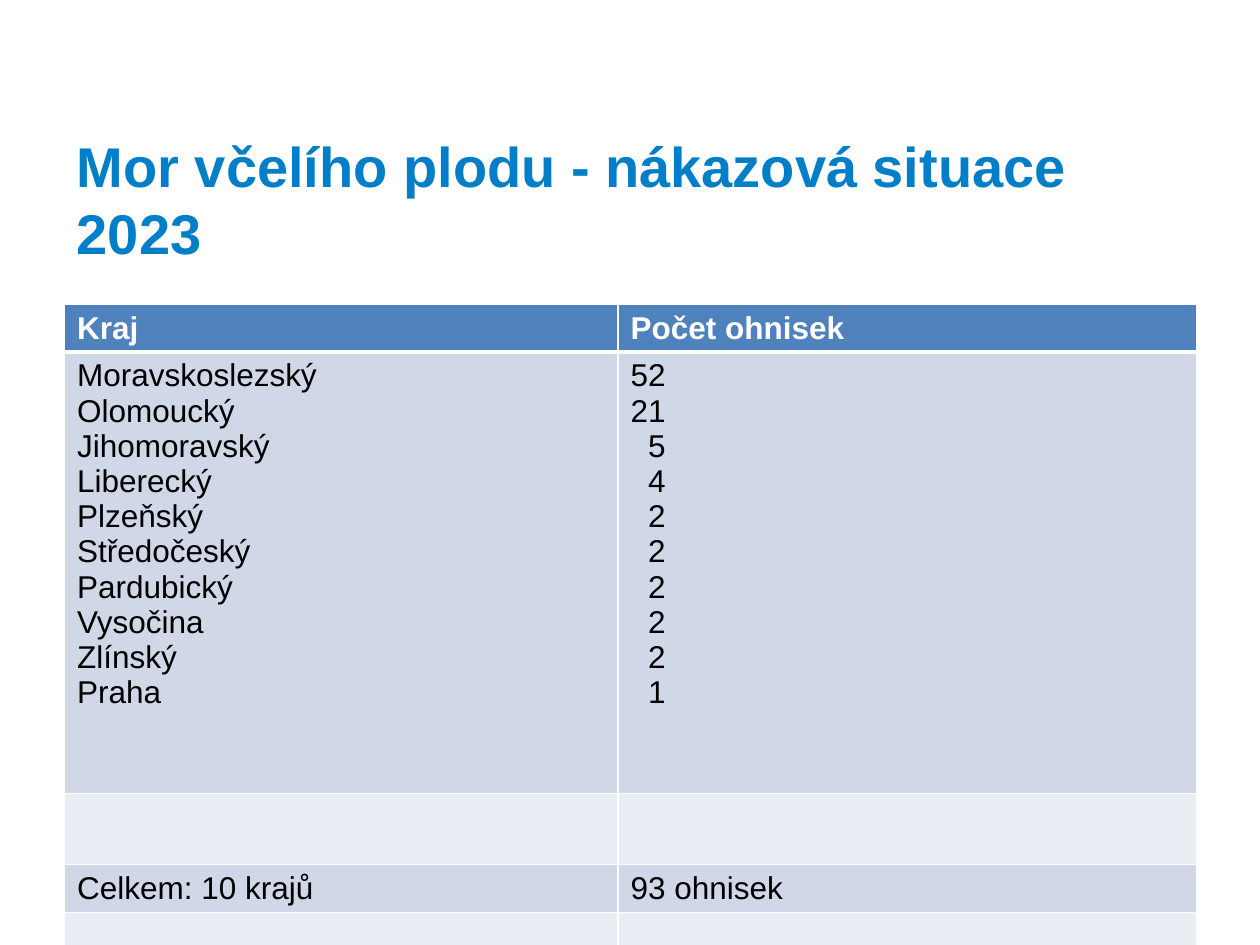
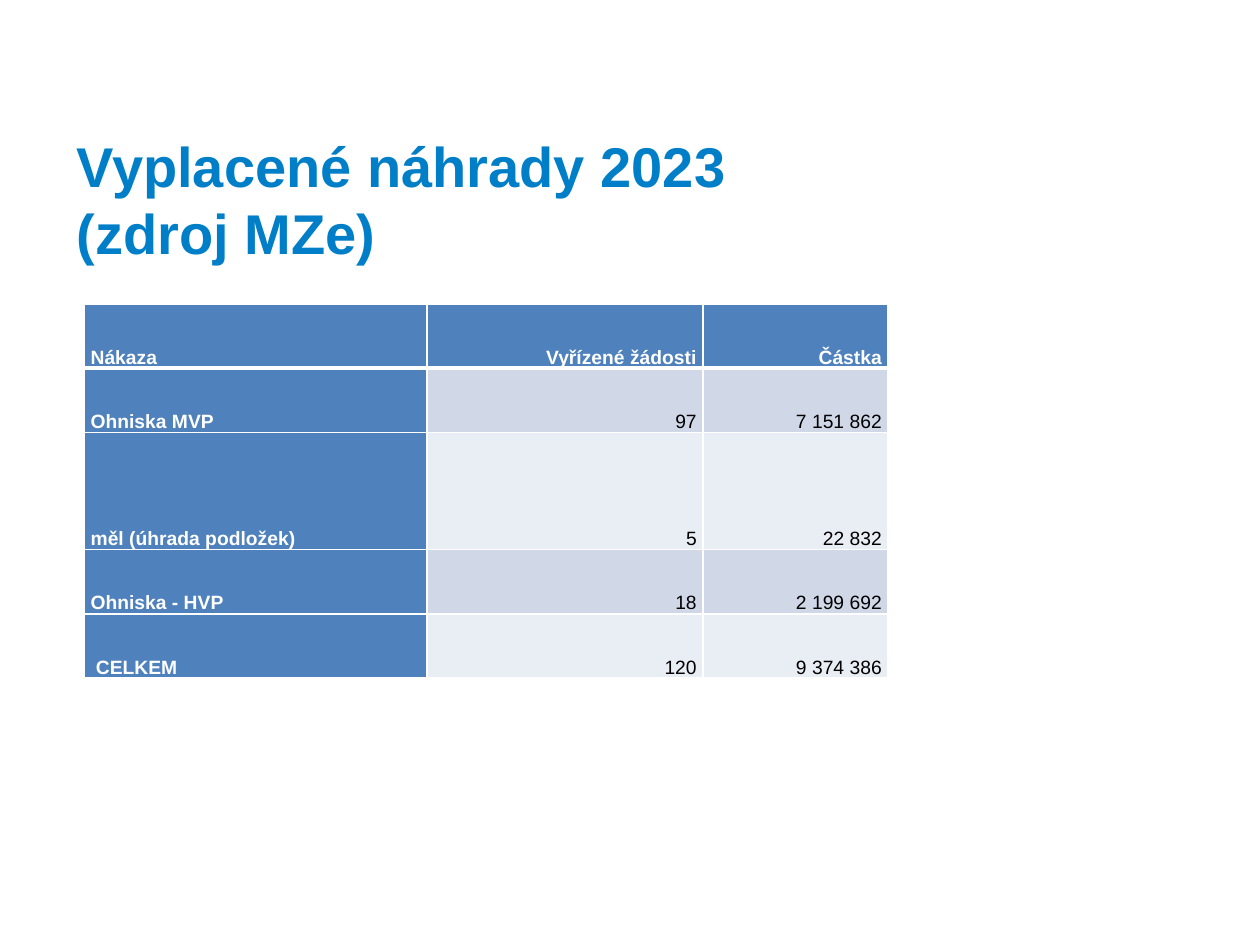
from pptx import Presentation
from pptx.dml.color import RGBColor as RGB
from pptx.enum.text import MSO_ANCHOR as ANCHOR, PP_ALIGN as ALIGN
from pptx.oxml import parse_xml
from pptx.oxml.ns import nsdecls
from pptx.util import Pt

COLORS = {
    "title": "007EC7",
    "head": "4F81BD",
    "odd": "D0D8E8",
    "even": "E9EDF4",
    "light": "FFFFFF",
    "dark": "000000",
}
FONT = "Arial"
TITLE_BOX = (36.72, 71.28, 647.28, 84.96)
TITLE_FORMAT = {"name": FONT, "size": Pt(32), "bold": True}

REGIONS = [
    ("Moravskoslezský", 52),
    ("Olomoucký", 21),
    ("Jihomoravský", 5),
    ("Liberecký", 4),
    ("Plzeňský", 2),
    ("Středočeský", 2),
    ("Pardubický", 2),
    ("Vysočina", 2),
    ("Zlínský", 2),
    ("Praha", 1),
]
EMPTY_ROW = ["", ""]
OUTBREAKS = [
    ["Kraj", "Počet ohnisek"],
    ["\n".join(name for name, count in REGIONS),
     "\n".join(str(count) for name, count in REGIONS)],
    EMPTY_ROW,
    ["Celkem: 10 krajů", "93 ohnisek"],
    *[EMPTY_ROW] * 3,
]
PAYMENTS = [
    ["Nákaza", "Vyřízené žádosti", "Částka"],
    ["Ohniska MVP", "97", "7 151 862"],
    ["měl (úhrada podložek)", "5", "22 832"],
    ["Ohniska - HVP", "18", "2 199 692"],
    ["CELKEM", "120", "9 374 386"],
]


def color(name):
    return RGB.from_string(COLORS[name])


def set_attrs(obj, values):
    for key, value in values.items():
        setattr(obj, key, value)


def indent(p, points):
    p._p.get_or_add_pPr().set("marL", str(Pt(points)))


def add_title(s, text, box):
    sp = s.shapes.title
    set_attrs(sp, dict(zip(("left", "top", "width", "height"), map(Pt, box))))
    tf = sp.text_frame
    tf.text = text
    set_attrs(tf, {"word_wrap": True, "vertical_anchor": ANCHOR.MIDDLE})
    for p in tf.paragraphs:
        set_attrs(p, {"alignment": ALIGN.LEFT, "line_spacing": Pt(38.2)})
        set_attrs(p.runs[0].font, TITLE_FORMAT)
        p.runs[0].font.color.rgb = color("title")


def set_borders(cell, row):
    widths = {"L": 1, "R": 1, "T": 3 if row == 1 else 1, "B": 3 if row == 0 else 1}
    tc_pr = cell._tc.get_or_add_tcPr()
    for i, (side, width) in enumerate(widths.items()):
        tc_pr.insert(i, parse_xml(
            f'<a:ln{side} {nsdecls("a")} w="{Pt(width)}"><a:solidFill>'
            f'<a:srgbClr val="{COLORS["light"]}"/></a:solidFill></a:ln{side}>'))


def add_table(s, rows, box, widths, heights, size, cell_format, head_col=False):
    left, top = box
    dims = (left, top, sum(widths), sum(heights))
    table = s.shapes.add_table(len(rows), len(widths), *map(Pt, dims)).table
    table.first_col = head_col
    for col, width in zip(table.columns, widths):
        col.width = Pt(width)
    for i, (values, height) in enumerate(zip(rows, heights)):
        table.rows[i].height = Pt(height)
        for j, text in enumerate(values):
            cell = table.cell(i, j)
            cell.text = text
            set_attrs(cell, cell_format)
            head = i == 0 or (head_col and j == 0)
            cell.fill.solid()
            cell.fill.fore_color.rgb = color("head" if head else "odd" if i % 2 else "even")
            set_borders(cell, i)
            for p in cell.text_frame.paragraphs:
                for r in p.runs:
                    set_attrs(r.font, {"name": FONT, "size": Pt(size), "bold": head})
                    r.font.color.rgb = color("light" if head else "dark")
    return table


def outbreak_slide(s):
    add_title(s, "Mor včelího plodu - nákazová situace 2023", TITLE_BOX)
    table = add_table(s, OUTBREAKS, (36.9, 173.8), (316.3, 330.6),
                      (27, 252.4, 40.4, *[27.4] * 4), 18, {"vertical_anchor": ANCHOR.TOP})
    for j in range(2):
        for p in table.cell(1, j).text_frame.paragraphs:
            p.line_spacing = Pt(20.15)
            if len(p.text) == 1:
                indent(p, 10)


def payment_slide(s):
    add_title(s, "Vyplacené náhrady 2023\n(zdroj MZe)", TITLE_BOX)
    cell_format = {
        "vertical_anchor": ANCHOR.BOTTOM,
        "margin_left": Pt(3.6),
        "margin_right": Pt(3.6),
        "margin_top": 0,
        "margin_bottom": 0,
    }
    table = add_table(s, PAYMENTS, (48.2, 173.8), (195.9, 157.68, 105.84),
                      (36.6, 36.72, 66.96, 36.72, 36.72), 11, cell_format, head_col=True)
    for i in range(len(PAYMENTS)):
        for j in (1, 2):
            table.cell(i, j).text_frame.paragraphs[0].alignment = ALIGN.RIGHT
    indent(table.cell(len(PAYMENTS) - 1, 0).text_frame.paragraphs[0], 3)


def main():
    prs = Presentation()
    set_attrs(prs, {"slide_width": Pt(720), "slide_height": Pt(540)})
    for build in (outbreak_slide, payment_slide):
        build(prs.slides.add_slide(prs.slide_layouts[5]))
    prs.save("out.pptx")


if __name__ == "__main__":
    main()
